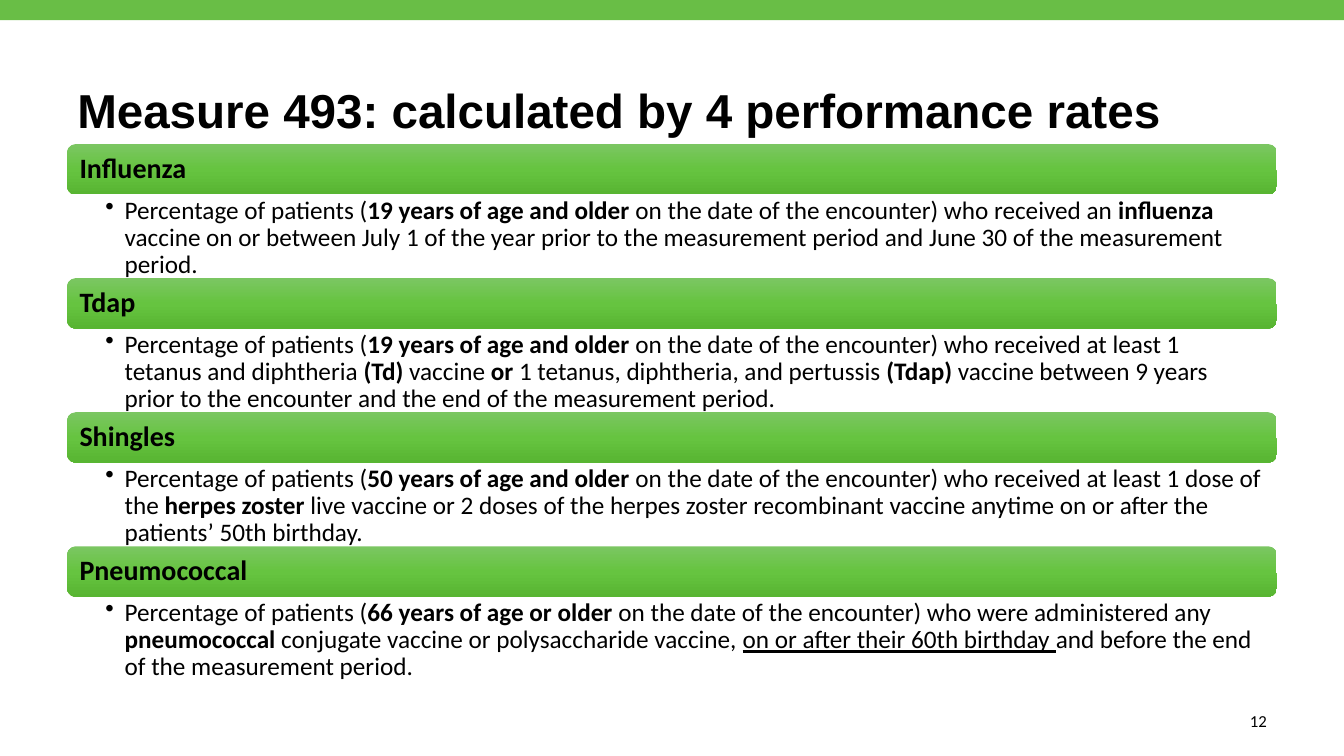
from collections import namedtuple
from copy import deepcopy
from dataclasses import dataclass

from lxml import etree
from pptx import Presentation
from pptx import util as u
from pptx.dml.color import RGBColor
from pptx.enum import shapes, text
from pptx.oxml.ns import qn

Box = namedtuple("Box", "left top width height")


@dataclass(frozen=True)
class Theme:
    ink: str = "000000"
    band: str = "69BE46"
    fade: tuple = ("7BC662", "66C440", "58B532")
    head: str = "Arial"
    body: str = "Calibri"
    title: int = 34
    label: int = 20
    copy: int = 18
    page: int = 12


THEME = Theme()
WIDE, HIGH = 13.33, 7.5
SIDE = 0.05 * WIDE
SPAN = WIDE - 2 * SIDE
START, PITCH, HEAD = 1.43, 1.33, 0.5

RATES = [
    ("Influenza",
     "Percentage of patients (*19 years of age and older *on the date of the encounter) "
     "who received an *influenza* vaccine on or between July 1 of the year prior to the "
     "measurement period and June 30 of the measurement period."),
    ("Tdap",
     "Percentage of patients (*19 years of age and older *on the date of the encounter) "
     "who received at least 1 tetanus and diphtheria *(Td) *vaccine *or* 1 tetanus, "
     "diphtheria, and pertussis *(Tdap) *vaccine between 9 years prior to the encounter "
     "and the end of the measurement period."),
    ("Shingles",
     "Percentage of patients (*50 years of age and older *on the date of the encounter) "
     "who received at least 1 dose of the *herpes zoster *live vaccine or 2 doses of the "
     "herpes zoster recombinant vaccine anytime on or after the patients’ 50th birthday."),
    ("Pneumococcal",
     "Percentage of patients (*66 years of age or older *on the date of the encounter) "
     "who were administered any *pneumococcal* conjugate vaccine or polysaccharide vaccine, "
     "_on or after their 60th birthday _and before the end of the measurement period."),
]


def inch(box):
    return [u.Inches(side) for side in box]


def write(frame, words, size, font=THEME.body, bold=False, align=text.PP_ALIGN.LEFT,
          anchor=text.MSO_ANCHOR.MIDDLE, pad=(0.1, 0.05, 0.1, 0.05), space=0.9, dot=False):
    frame.word_wrap = True
    frame.auto_size = text.MSO_AUTO_SIZE.NONE
    frame.vertical_anchor = anchor
    (frame.margin_left, frame.margin_top,
     frame.margin_right, frame.margin_bottom) = inch(pad)
    para = frame.paragraphs[0]
    para.alignment, para.line_spacing = align, space
    if dot:
        para.level = 1
        props = para._p.get_or_add_pPr()
        props.set("marL", str(u.Inches(0.19)))
        props.set("indent", str(u.Inches(-0.19)))
        etree.SubElement(props, qn("a:buChar")).set("char", "•")
    for i, part in enumerate(words.split("*")):
        for j, bit in enumerate(part.split("_")):
            if bit:
                run = para.add_run()
                run.text = bit
                run.font.name, run.font.size = font, u.Pt(size)
                run.font.bold = bold or i % 2 == 1
                run.font.underline = j % 2 == 1
                run.font.color.rgb = RGBColor.from_string(THEME.ink)


def block(slide, kind, box):
    shape = slide.shapes.add_shape(kind, *inch(box))
    shape.shadow.inherit = False
    shape.line.fill.background()
    return shape


def shade(shape, tones):
    shape.fill.gradient()
    shape.fill.gradient_angle = 270
    stops = shape._element.spPr.find(".//" + qn("a:gsLst"))
    stops.append(deepcopy(stops[0]))
    for i, (stop, tone) in enumerate(zip(shape.fill.gradient_stops, tones)):
        stop.color.rgb = RGBColor.from_string(tone)
        stop.position = i / (len(tones) - 1)


def strip(slide, box):
    shape = block(slide, shapes.MSO_SHAPE.RECTANGLE, box)
    shape.fill.solid()
    shape.fill.fore_color.rgb = RGBColor.from_string(THEME.band)


def title(slide, box, words):
    shape = slide.shapes.title
    shape.left, shape.top, shape.width, shape.height = inch(box)
    write(shape.text_frame, words, THEME.title, font=THEME.head, bold=True)


def rate(slide, box, name, words):
    bar = block(slide, shapes.MSO_SHAPE.ROUNDED_RECTANGLE, box._replace(height=HEAD))
    shade(bar, THEME.fade)
    write(bar.text_frame, name, THEME.label, bold=True)
    area = box._replace(top=box.top + HEAD, height=box.height - HEAD)
    note = slide.shapes.add_textbox(*inch(area))
    write(note.text_frame, words, THEME.copy, anchor=text.MSO_ANCHOR.TOP,
          pad=(0.38, 0.03, 0.14, 0.03), dot=True)


def page(slide, box, words):
    shape = slide.shapes.add_textbox(*inch(box))
    write(shape.text_frame, words, THEME.page, align=text.PP_ALIGN.RIGHT, space=1.0)


def main():
    deck = Presentation()
    deck.slide_width, deck.slide_height = u.Inches(WIDE), u.Inches(HIGH)
    slide = deck.slides.add_slide(deck.slide_layouts[5])
    strip(slide, Box(0, 0, WIDE, 0.2))
    title(slide, Box(SIDE, 0.4, SPAN, 1.45),
          "Measure 493: calculated by 4 performance rates")
    for i, (name, words) in enumerate(RATES):
        rate(slide, Box(SIDE, START + i * PITCH, SPAN, PITCH), name, words)
    page(slide, Box(SIDE + 0.75 * SPAN, 6.95, 0.25 * SPAN, 0.4), "12")
    deck.save("out.pptx")


if __name__ == "__main__":
    main()
